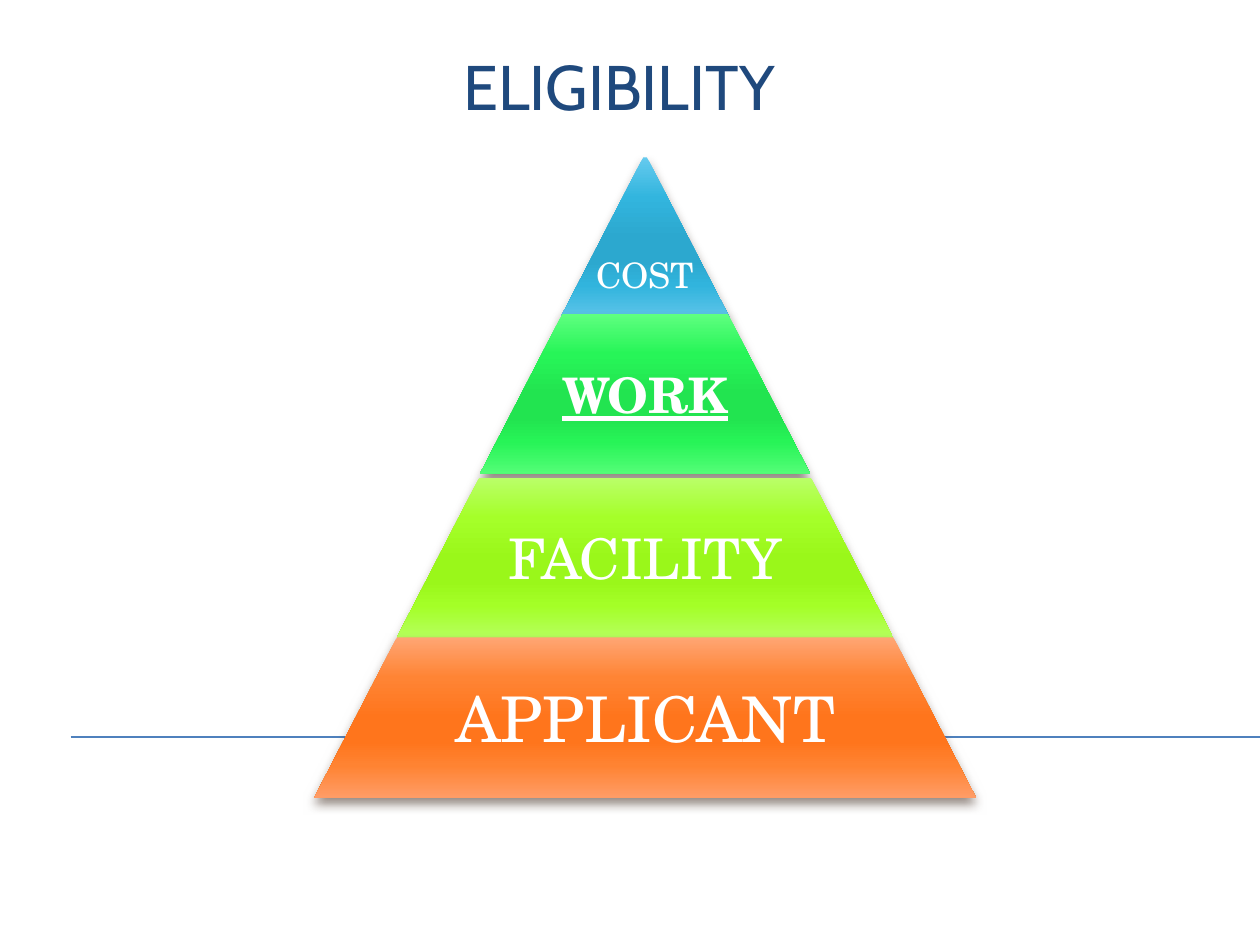
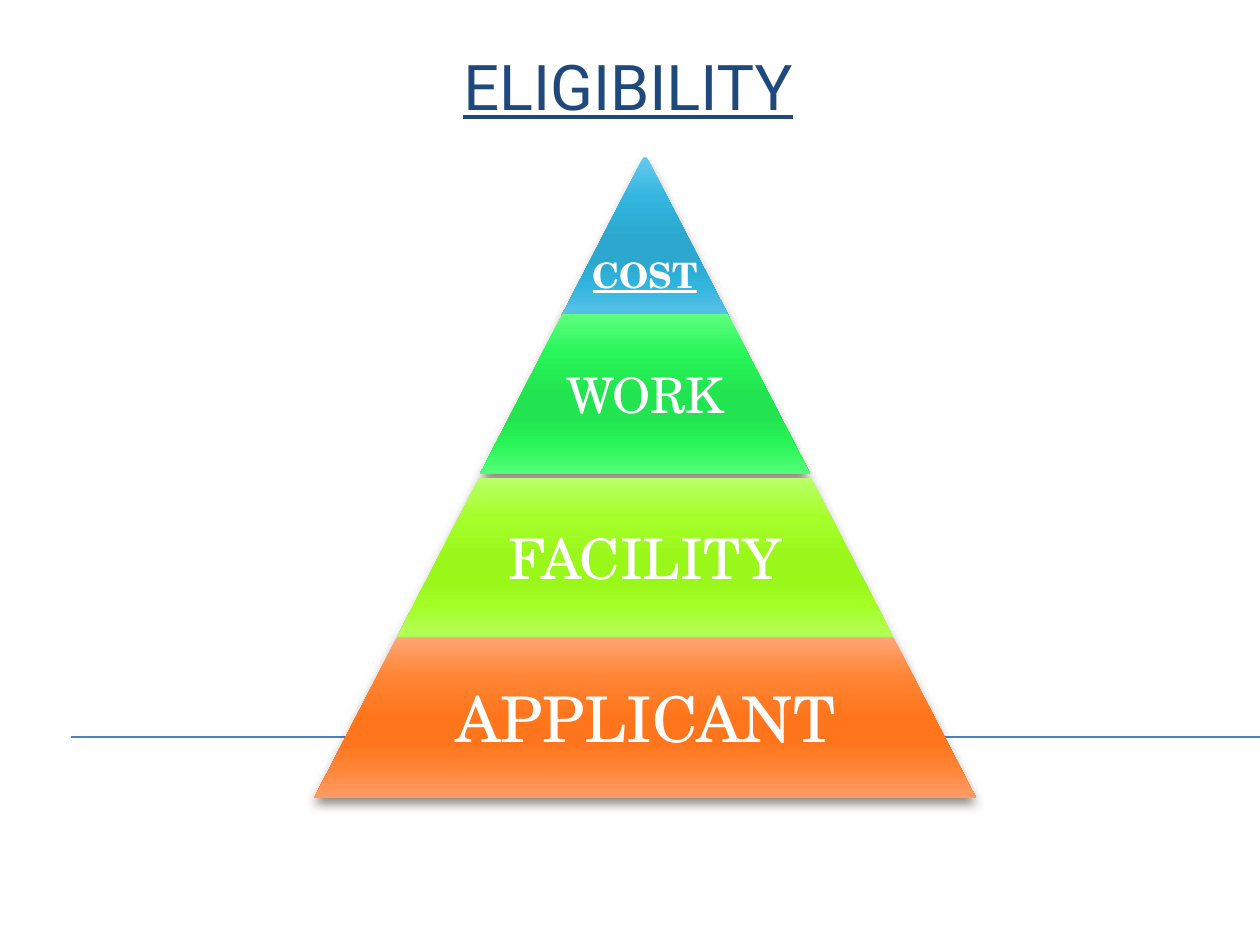
from dataclasses import dataclass

from lxml.etree import SubElement
from pptx import Presentation
from pptx.dml.color import RGBColor
from pptx.enum.shapes import MSO_CONNECTOR, MSO_SHAPE
from pptx.enum.text import MSO_ANCHOR, PP_ALIGN
from pptx.oxml.ns import qn
from pptx.shapes.autoshape import Shape
from pptx.shapes.group import GroupShape
from pptx.slide import Slide
from pptx.util import Inches, Pt


@dataclass(frozen=True)
class Theme:
    """Colours, fonts and sizes shared by the slides."""
    title: str = "1F497D"
    rule: str = "4F81BD"
    label: str = "FFFFFF"
    shade: str = "4E3B30"
    serif: str = "TeX Gyre Schola"
    title_size: int = 36
    stops: tuple[int, ...] = (0, 25, 50, 65, 80, 100)


@dataclass(frozen=True)
class Tier:
    """One layer of the pyramid."""
    name: str
    top: float
    width: float
    size: int
    tones: str
    ratio: float = 0.65
    inset: float = 0.04
    drop: float = 0


@dataclass(frozen=True)
class Page:
    """What differs from slide to slide."""
    font: str
    lined: bool
    focus: str


THEME = Theme()
AXIS = 5.12
HEIGHT = 1.27
TIERS = (
    Tier("COST", 1.25, 1.34, 20, "65CAEE 32B5DE 2CA8CF 2CA8CF 31B4DD 5DC4E9", 1, 0.05, 0.58),
    Tier("WORK", 2.49, 2.62, 28, "5FFF80 27F558 22E450 22E450 27F457 53FD77"),
    Tier("FACILITY", 3.79, 3.94, 32, "BAFF69 A5FF29 9AF71A 9AF71A A4FF27 B5FF5C"),
    Tier("APPLICANT", 5.06, 5.25, 36, "FFA573 FF8434 FF751C FF751C FF8332 FF9C66", inset=0.05),
)
PAGES = (Page("Cabin", False, "WORK"), Page("Roboto", True, "COST"))


def write(box: Shape, text: str, font: str, size: int, tone: str,
          bold: bool = False, lined: bool = False) -> None:
    """Put one styled paragraph in a box."""
    box.text_frame.word_wrap = True
    para = box.text_frame.paragraphs[0]
    para.text = text
    para.font.name = font
    para.font.size = Pt(size)
    para.font.color.rgb = RGBColor.from_string(tone)
    para.font.bold = bold
    para.font.underline = lined


def shade(shape: Shape, tones: str) -> None:
    """Give a shape its gradient and soft shadow."""
    shape.fill.gradient()
    shape.fill.gradient_angle = 270
    props = shape.element.spPr
    stops = props.find(qn("a:gradFill")).find(qn("a:gsLst"))
    for old in list(stops):
        stops.remove(old)
    for pos, tone in zip(THEME.stops, tones.split()):
        stop = SubElement(stops, qn("a:gs"), pos=str(pos * 1000))
        SubElement(stop, qn("a:srgbClr"), val=tone)
    shape.line.fill.background()
    shape.shadow.inherit = False
    cast = SubElement(props.find(qn("a:effectLst")), qn("a:outerShdw"),
                      blurRad=str(Pt(6)), dist=str(Pt(4)), dir="5400000",
                      algn="ctr", rotWithShape="0")
    tint = SubElement(cast, qn("a:srgbClr"), val=THEME.shade)
    SubElement(tint, qn("a:alpha"), val="60000")


def draw_tier(group: GroupShape, tier: Tier, focus: bool) -> None:
    """Draw a layer and its label."""
    body = group.shapes.add_shape(
        MSO_SHAPE.TRAPEZOID, Inches(AXIS - tier.width / 2), Inches(tier.top),
        Inches(tier.width), Inches(HEIGHT))
    body.adjustments[0] = 0.516
    shade(body, tier.tones)
    span = tier.width * tier.ratio
    label = group.shapes.add_textbox(
        Inches(AXIS - span / 2), Inches(tier.top), Inches(span), Inches(HEIGHT))
    frame = label.text_frame
    frame.vertical_anchor = MSO_ANCHOR.MIDDLE
    frame.margin_left = frame.margin_right = frame.margin_bottom = Inches(tier.inset)
    frame.margin_top = Inches(tier.inset + tier.drop)
    write(label, tier.name, THEME.serif, tier.size, THEME.label, focus, focus)
    frame.paragraphs[0].alignment = PP_ALIGN.CENTER


def draw_base(slide: Slide, page: Page) -> None:
    """Draw the rule and the title."""
    rule = slide.shapes.add_connector(
        MSO_CONNECTOR.STRAIGHT, Inches(0.56), Inches(5.85), Inches(10), Inches(5.85))
    rule.line.color.rgb = RGBColor.from_string(THEME.rule)
    rule.line.width = Pt(0.75)
    SubElement(rule.element.spPr, qn("a:effectLst"))
    title = slide.shapes.add_textbox(Inches(3.58), Inches(0.33), Inches(3.33), Inches(1))
    write(title, "ELIGIBILITY", page.font, THEME.title_size, THEME.title, lined=page.lined)


def main() -> None:
    """Build and save the deck."""
    deck = Presentation()
    deck.slide_width, deck.slide_height = Inches(10), Inches(7.5)
    for page in PAGES:
        slide = deck.slides.add_slide(deck.slide_layouts[6])
        draw_base(slide, page)
        group = slide.shapes.add_group_shape()
        for tier in TIERS:
            draw_tier(group, tier, tier.name == page.focus)
    deck.save("out.pptx")


if __name__ == "__main__":
    main()
